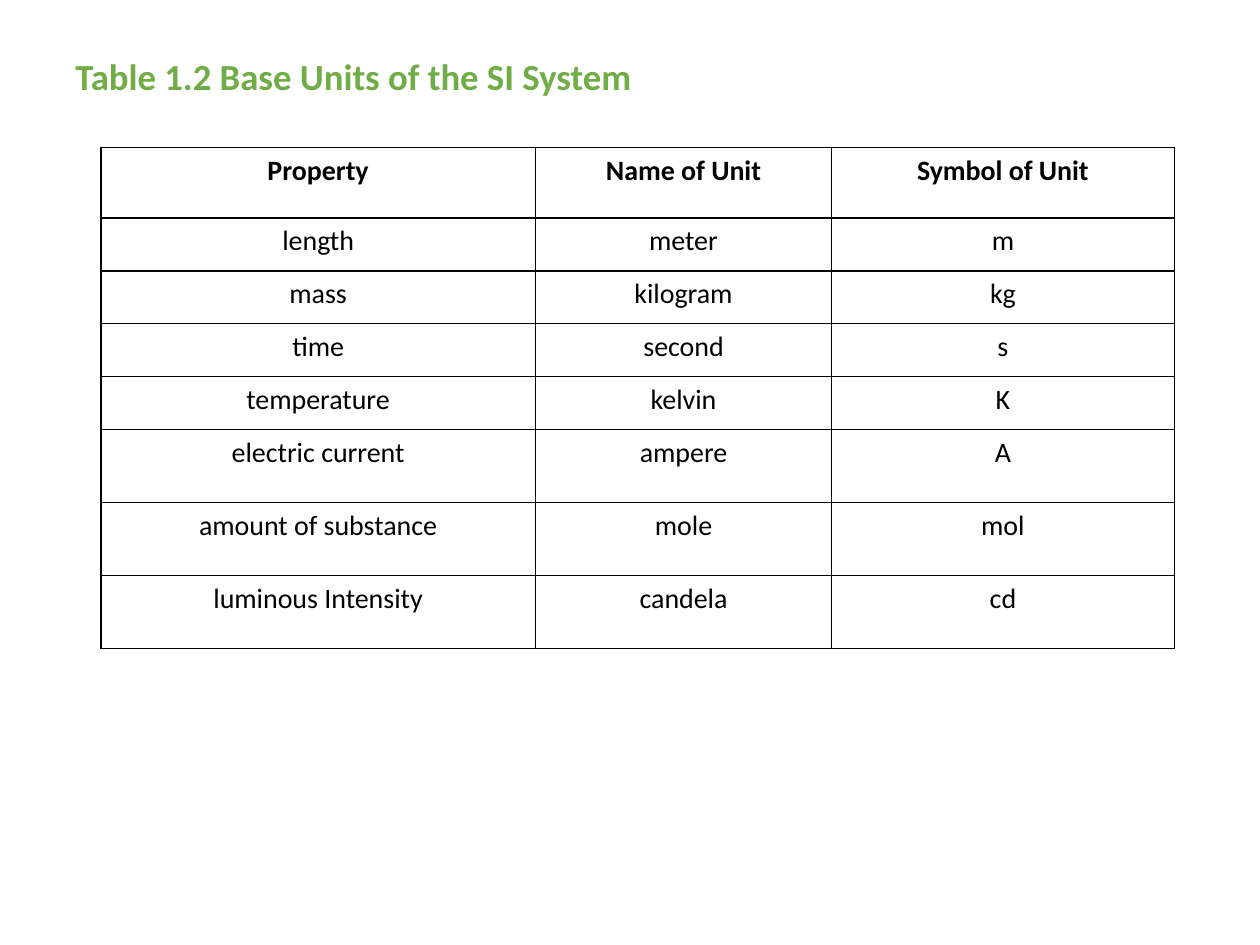
from dataclasses import dataclass

from lxml import etree
from pptx import Presentation
from pptx import util as u
from pptx.dml.color import RGBColor
from pptx.enum import text
from pptx.oxml.ns import qn


@dataclass(frozen=True)
class Theme:
    font: str = "Calibri"
    title_size: float = 21
    cell_size: float = 16
    title_color: str = "70AD47"
    ink: str = "000000"
    rule_width: float = 1


class PageBuilder:
    """Places elements on a grid of 100 columns by 75 rows."""

    COLUMNS, ROWS = 100, 75

    def __init__(self, deck, theme):
        self.theme = theme
        self.column = deck.slide_width / self.COLUMNS
        self.row = deck.slide_height / self.ROWS
        self.page = deck.slides.add_slide(deck.slide_layouts[6])

    def x(self, columns):
        return u.Emu(round(columns * self.column))

    def y(self, rows):
        return u.Emu(round(rows * self.row))

    def style(self, para, size, color, bold):
        font = para.font
        font.name, font.size, font.bold = self.theme.font, u.Pt(size), bold
        font.color.rgb = RGBColor.from_string(color)

    def title(self, words, left, top, width, height):
        box = self.page.shapes.add_textbox(
            self.x(left), self.y(top), self.x(width), self.y(height))
        frame = box.text_frame
        frame.word_wrap = True
        frame.vertical_anchor = text.MSO_ANCHOR.MIDDLE
        para = frame.paragraphs[0]
        para.text = words
        para.line_spacing = 0.9
        self.style(para, self.theme.title_size, self.theme.title_color, True)

    def table(self, records, left, top, widths, heights):
        frame = self.page.shapes.add_table(
            len(heights), len(widths), self.x(left), self.y(top),
            self.x(sum(widths)), self.y(sum(heights)))
        table = frame.table
        table.first_row = table.horz_banding = False
        for column, width in zip(table.columns, widths):
            column.width = self.x(width)
        for row, height in zip(table.rows, heights):
            row.height = self.y(height)
        for i, record in enumerate(records):
            for j, words in enumerate(record):
                self.cell(table.cell(i, j), words, bold=i == 0)

    def cell(self, cell, words, bold):
        cell.fill.background()
        self.borders(cell)
        para = cell.text_frame.paragraphs[0]
        para.text = words
        para.alignment = text.PP_ALIGN.CENTER
        self.style(para, self.theme.cell_size, self.theme.ink, bold)

    def borders(self, cell):
        properties = cell._tc.get_or_add_tcPr()
        # Border elements must come before the fill
        for place, side in enumerate(("lnL", "lnR", "lnT", "lnB")):
            line = etree.Element(
                qn(f"a:{side}"), w=str(u.Pt(self.theme.rule_width)))
            fill = etree.SubElement(line, qn("a:solidFill"))
            etree.SubElement(fill, qn("a:srgbClr"), val=self.theme.ink)
            properties.insert(place, line)


UNITS = [
    ("Property", "Name of Unit", "Symbol of Unit"),
    ("length", "meter", "m"),
    ("mass", "kilogram", "kg"),
    ("time", "second", "s"),
    ("temperature", "kelvin", "K"),
    ("electric current", "ampere", "A"),
    ("amount of substance", "mole", "mol"),
    ("luminous Intensity", "candela", "cd"),
]


def main():
    deck = Presentation()
    deck.slide_width, deck.slide_height = u.Inches(10), u.Inches(7.5)
    builder = PageBuilder(deck, Theme())

    # Heading
    builder.title("Table 1.2 Base Units of the SI System", 5, 2.6, 88.2, 7.2)

    # Base units: a header row, four short rows, three tall rows
    builder.table(UNITS, left=8, top=11.7, widths=[34.5, 23.5, 27.2],
                  heights=[5.6] + [4.2] * 4 + [5.8] * 3)

    deck.save("out.pptx")


if __name__ == "__main__":
    main()
